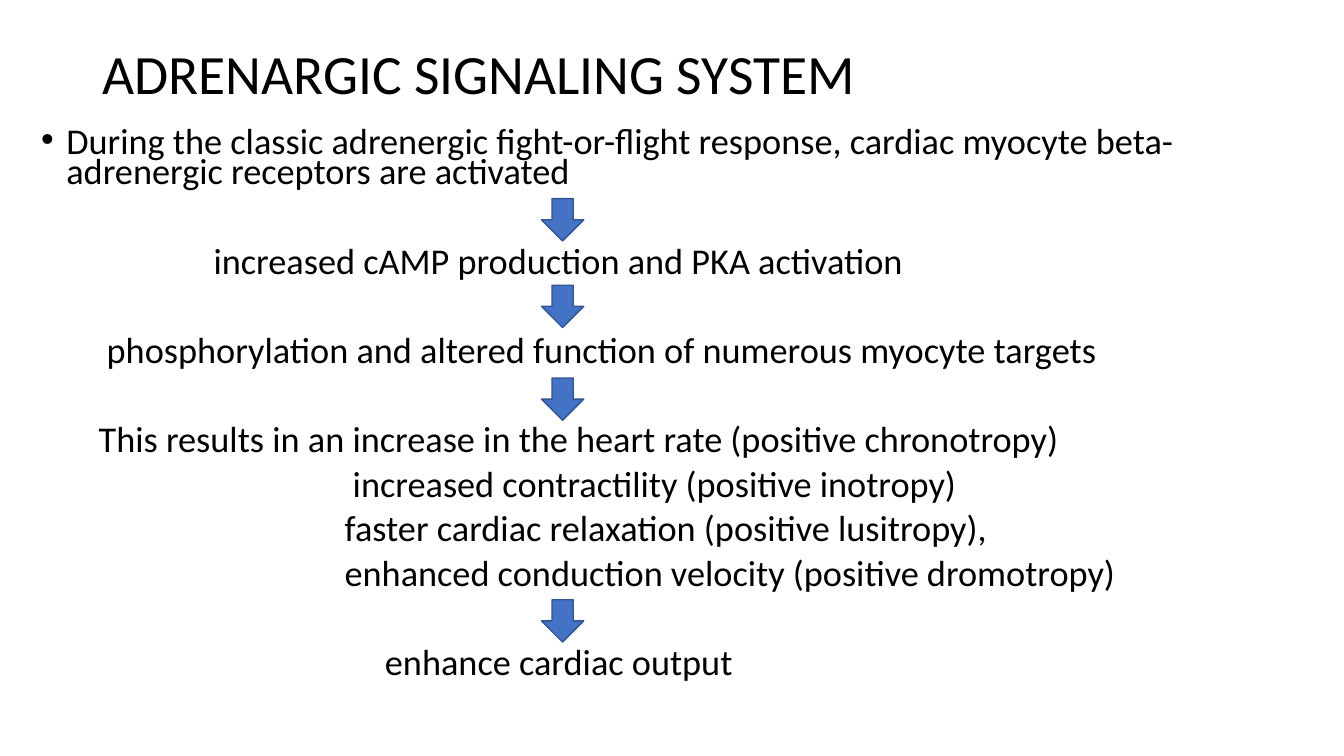
import pptx
import pptx.dml.color
import pptx.enum.shapes
import pptx.enum.text
import pptx.util
from lxml import etree

Inches = pptx.util.Inches
Pt = pptx.util.Pt

FONT = "Calibri"
BODY_SIZE = 25.9
LINE_GAP = 10
ARROW_GAP = 42  # leaves one free line for an arrow

# text, left indent in inches, space before in points
STEPS = [
    ("During the classic adrenergic fight-or-flight response, cardiac myocyte "
     "beta-adrenergic receptors are activated", 0.25, LINE_GAP),
    ("increased cAMP production and PKA activation", 1.71, ARROW_GAP),
    ("phosphorylation and altered function of numerous myocyte targets", 0.65, ARROW_GAP),
    ("This results in an increase in the heart rate (positive chronotropy)", 0.57, ARROW_GAP),
    ("increased contractility (positive inotropy)", 3.09, LINE_GAP),
    ("faster cardiac relaxation (positive lusitropy),", 3.01, LINE_GAP),
    ("enhanced conduction velocity (positive dromotropy)", 3.01, LINE_GAP),
    ("enhance cardiac output", 3.41, ARROW_GAP),
]
ARROW_LEFT = 5.37
ARROW_TOPS = [1.97, 2.83, 3.75, 5.95]
ARROW_SIZE = 0.42


def color(hex_string):
    return pptx.dml.color.RGBColor.from_string(hex_string)


def add_text_frame(slide, left, top, width, height, anchor):
    box = slide.shapes.add_textbox(Inches(left), Inches(top), Inches(width), Inches(height))
    box.text_frame.word_wrap = True
    box.text_frame.vertical_anchor = anchor
    return box.text_frame


def write(paragraph, text, size, line_spacing):
    paragraph.text = text
    paragraph.line_spacing = line_spacing
    paragraph.font.name = FONT
    paragraph.font.size = Pt(size)
    paragraph.font.color.rgb = color("000000")


def indent(paragraph, left, bullet=False):
    """Set the left margin; a bullet hangs a quarter inch before it."""
    properties = paragraph._p.get_or_add_pPr()
    properties.set("marL", str(Inches(left)))
    if bullet:
        properties.set("indent", str(Inches(-0.25)))
        namespace = pptx.oxml.ns.qn
        font = etree.SubElement(properties, namespace("a:buFont"), typeface="Arial")
        character = etree.SubElement(properties, namespace("a:buChar"), char="•")
        default_run = properties.find(namespace("a:defRPr"))
        default_run.addprevious(font)
        default_run.addprevious(character)


def add_title(slide, left, top, width, height):
    frame = add_text_frame(slide, left, top, width, height, pptx.enum.text.MSO_ANCHOR.MIDDLE)
    write(frame.paragraphs[0], "ADRENARGIC SIGNALING SYSTEM", 39.6, 0.9)


def add_steps(slide, left, top, width, height):
    frame = add_text_frame(slide, left, top, width, height, pptx.enum.text.MSO_ANCHOR.TOP)
    for number, (text, left_indent, space_before) in enumerate(STEPS):
        paragraph = frame.add_paragraph() if number else frame.paragraphs[0]
        write(paragraph, text, BODY_SIZE, 0.7)
        paragraph.space_before = Pt(space_before)
        indent(paragraph, left_indent, bullet=number == 0)


def add_down_arrow(slide, left, top, size):
    arrow = slide.shapes.add_shape(
        pptx.enum.shapes.MSO_SHAPE.DOWN_ARROW,
        Inches(left), Inches(top), Inches(size), Inches(size))
    arrow.shadow.inherit = False
    arrow.fill.solid()
    arrow.fill.fore_color.rgb = color("4472C4")
    arrow.line.color.rgb = color("325491")
    arrow.line.width = Pt(1)


def main():
    presentation = pptx.Presentation()
    presentation.slide_width = Inches(13.33)
    presentation.slide_height = Inches(7.5)
    slide = presentation.slides.add_slide(presentation.slide_layouts[6])
    add_title(slide, 0.92, 0.4, 11.5, 0.72)
    add_steps(slide, 0.31, 1.24, 12.75, 5.99)
    for top in ARROW_TOPS:
        add_down_arrow(slide, ARROW_LEFT, top, ARROW_SIZE)
    presentation.save("out.pptx")


if __name__ == "__main__":
    main()
